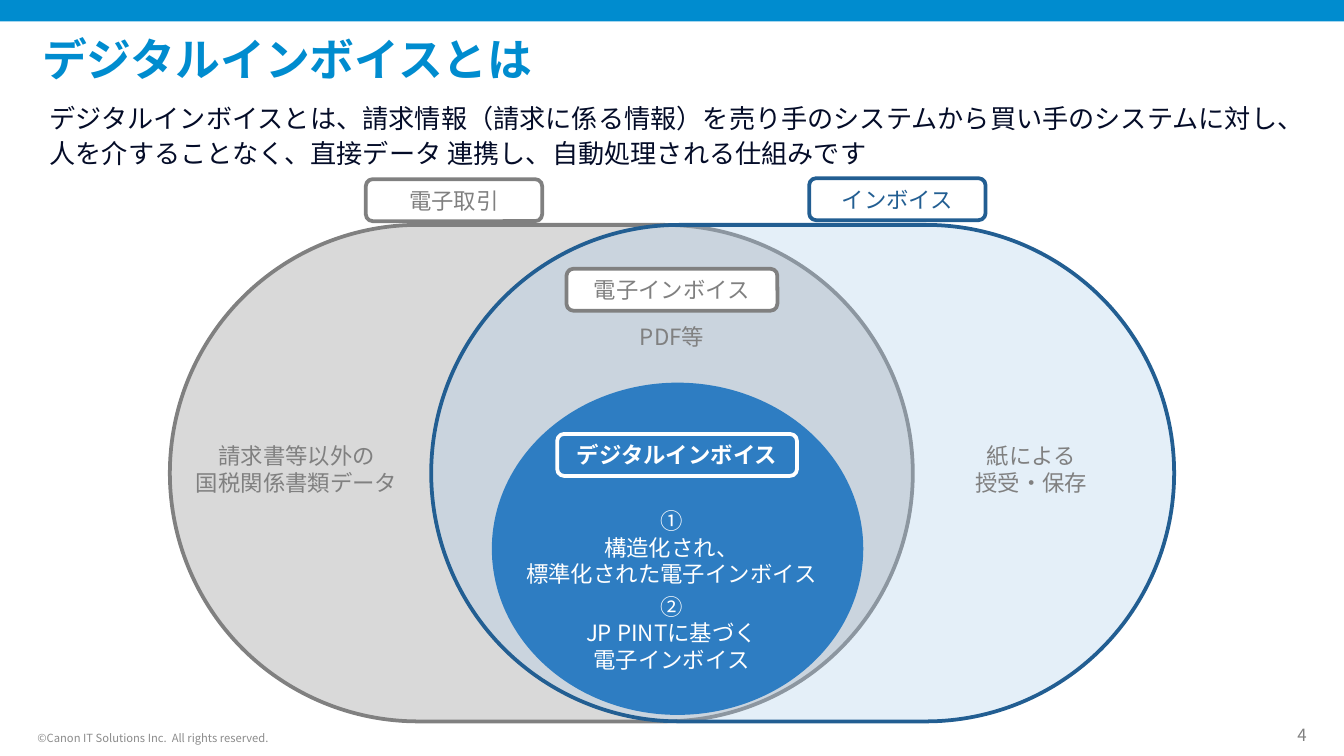
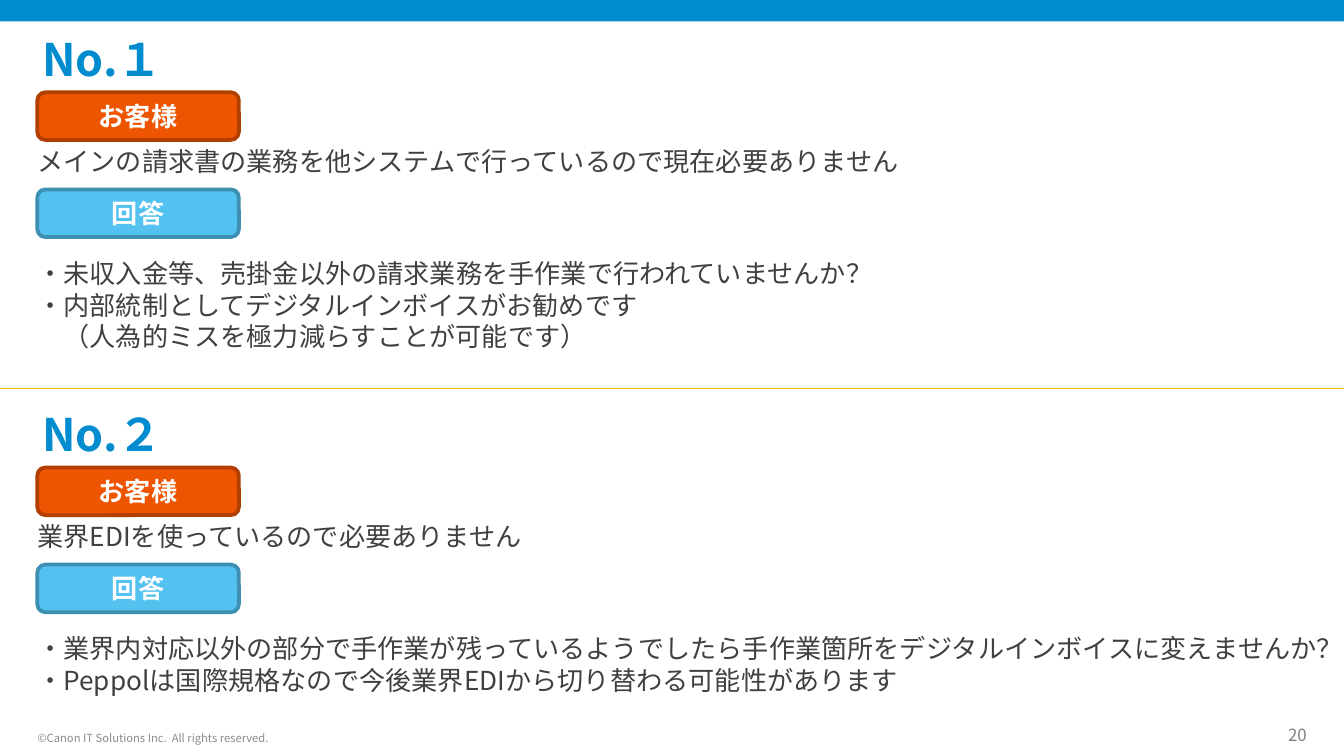
from lxml import etree
from pptx import Presentation
from pptx.dml.color import RGBColor
from pptx.enum import shapes, text
from pptx.oxml import ns
from pptx.util import Pt

FONT = "Noto Sans CJK JP"
BLUE, NAVY, DEEP_BLUE = "008CCF", "225E92", "2E7DC2"
GRAY, DARK_GRAY, WHITE = "808080", "404040", "FFFFFF"
TOP, MIDDLE, BOTTOM = text.MSO_ANCHOR.TOP, text.MSO_ANCHOR.MIDDLE, text.MSO_ANCHOR.BOTTOM
LEFT, CENTER, RIGHT = text.PP_ALIGN.LEFT, text.PP_ALIGN.CENTER, text.PP_ALIGN.RIGHT
ROUNDED = shapes.MSO_SHAPE.ROUNDED_RECTANGLE
paint = RGBColor.from_string


def add_box(slide, box, kind=None, fill=None, line=None):
    """Add a preset shape, or a text box when no kind is given."""
    lengths = [Pt(value) for value in box]
    if kind is None:
        return slide.shapes.add_textbox(*lengths)
    shape = slide.shapes.add_shape(kind, *lengths)
    shape.shadow.inherit = False
    if fill:
        shape.fill.solid()
        shape.fill.fore_color.rgb = paint(fill)
    else:
        shape.fill.background()
    if line:
        shape.line.color.rgb = paint(line)
        shape.line.width = Pt(2)
    else:
        shape.line.fill.background()
    return shape


def write(shape, lines, size, color, bold=False, align=LEFT, anchor=TOP,
          inset=True, font=FONT, spacing=None):
    """Fill a shape with one paragraph per line, in a single style."""
    frame = shape.text_frame
    frame.word_wrap = True
    frame.auto_size = text.MSO_AUTO_SIZE.NONE
    frame.vertical_anchor = anchor
    if not inset:
        frame.margin_left = frame.margin_right = 0
        frame.margin_top = frame.margin_bottom = 0
    frame.text = "\n".join(lines)
    for paragraph in frame.paragraphs:
        paragraph.alignment = align
        paragraph.line_spacing = Pt(spacing or size * 1.2)
        paragraph.font.name = font
        paragraph.font.size = Pt(size)
        paragraph.font.bold = bold
        paragraph.font.color.rgb = paint(color)
        defaults = paragraph._p.pPr.find(ns.qn("a:defRPr"))
        etree.SubElement(defaults, ns.qn("a:ea"), typeface=FONT)


presentation = Presentation()
presentation.slide_width, presentation.slide_height = Pt(720), Pt(405)
title_only = presentation.slide_layouts[5]

# Shared band, title and footer
slides = []
for heading, number in (("デジタルインボイスとは", "4"), ("No.１", "20")):
    slide = presentation.slides.add_slide(title_only)
    add_box(slide, (0, 0, 720, 11.5), shapes.MSO_SHAPE.RECTANGLE, BLUE)
    title = slide.shapes.title
    title.left, title.top, title.width, title.height = Pt(22.5), Pt(17), Pt(559), Pt(28)
    write(title, [heading], 24, BLUE, bold=True, inset=False)
    write(add_box(slide, (672, 388, 28, 11)), [number], 9, GRAY,
          align=RIGHT, anchor=BOTTOM, inset=False)
    write(add_box(slide, (20, 388, 170, 11)),
          ["©Canon IT Solutions Inc.  All rights reserved."], 6, "8C8C8C",
          anchor=BOTTOM, inset=False)
    slides.append(slide)
venn_slide, answers_slide = slides

# Venn diagram of invoice types
write(add_box(venn_slide, (19.5, 49, 681, 45)),
      ["デジタルインボイスとは、請求情報（請求に係る情報）を売り手のシステムから"
       "買い手のシステムに対し、人を介することなく、直接データ 連携し、"
       "自動処理される仕組みです"], 14, "040C28", font="Karla", spacing=19)

for left, fill, line in ((91, "D9D9D9", GRAY), (231, "A8CBEA", NAVY)):
    area = add_box(venn_slide, (left, 120.5, 398, 266), ROUNDED, fill, line)
    area.adjustments[0] = 0.5
invoice_color = area.fill._xPr.find(ns.qn("a:solidFill"))[0]
etree.SubElement(invoice_color, ns.qn("a:alpha"), val="30000")

add_box(venn_slide, (263.5, 205, 199, 178), shapes.MSO_SHAPE.FLOWCHART_CONNECTOR, DEEP_BLUE)

labels = (
    ("電子取引", (196, 96, 94.5, 22.5), WHITE, GRAY, GRAY),
    ("電子インボイス", (303.5, 144, 113, 22.5), WHITE, GRAY, GRAY),
    ("インボイス", (433.5, 95.5, 94.5, 22.5), WHITE, NAVY, NAVY),
    ("デジタルインボイス", (298.5, 232.5, 128.5, 22.5), None, WHITE, WHITE),
)
for label, box, fill, line, color in labels:
    write(add_box(venn_slide, box, ROUNDED, fill, line), [label], 12, color,
          bold=fill is None, align=CENTER, anchor=MIDDLE)

descriptions = (
    (["請求書等以外の", "国税関係書類データ"], (91, 233.5, 136, 36), GRAY),
    (["紙による", "授受・保存"], (484.5, 233.5, 136, 36), GRAY),
    (["PDF等"], (317.5, 169.5, 85, 21.5), GRAY),
    (["①", "構造化され、", "標準化された電子インボイス"], (270.5, 268, 178.5, 51), WHITE),
    (["②", "JP PINTに基づく", "電子インボイス"], (270.5, 314, 178.5, 51), WHITE),
)
for lines, box, color in descriptions:
    write(add_box(venn_slide, box), lines, 12, color, align=CENTER)

# Two customer objections, each with its answer
objections = (
    ("メインの請求書の業務を他システムで行っているので現在必要ありません",
     ["・未収入金等、売掛金以外の請求業務を手作業で行われていませんか？",
      "・内部統制としてデジタルインボイスがお勧めです",
      "　（人為的ミスを極力減らすことが可能です）"]),
    ("業界EDIを使っているので必要ありません",
     ["・業界内対応以外の部分で手作業が残っているようでしたら"
      "手作業箇所をデジタルインボイスに変えませんか？",
      "・Peppolは国際規格なので今後業界EDIから切り替わる可能性があります"]),
)
for index, (objection, answer) in enumerate(objections):
    offset = index * 201
    for label, top, fill, line in (("お客様", 49.5, "EE5500", "B03F00"),
                                   ("回答", 101.5, "54C2F0", "3E90B2")):
        write(add_box(answers_slide, (20, top + offset, 108, 25.5), ROUNDED, fill, line),
              [label], 14, WHITE, bold=True, align=CENTER, anchor=MIDDLE)
    for lines, top, height in (([objection], 78, 17), (answer, 138, 51)):
        write(add_box(answers_slide, (20, top + offset, 700, height)),
              lines, 14, DARK_GRAY, inset=False)

write(add_box(answers_slide, (22.5, 218, 567, 28)), ["No.２"], 24, BLUE,
      bold=True, inset=False)

divider = answers_slide.shapes.add_connector(
    shapes.MSO_CONNECTOR.STRAIGHT, 0, Pt(208), Pt(720), Pt(208))
divider.line.color.rgb = paint("F4BA00")
divider.line.width = Pt(0.75)
etree.SubElement(divider._element.spPr, ns.qn("a:effectLst"))

presentation.save("out.pptx")
